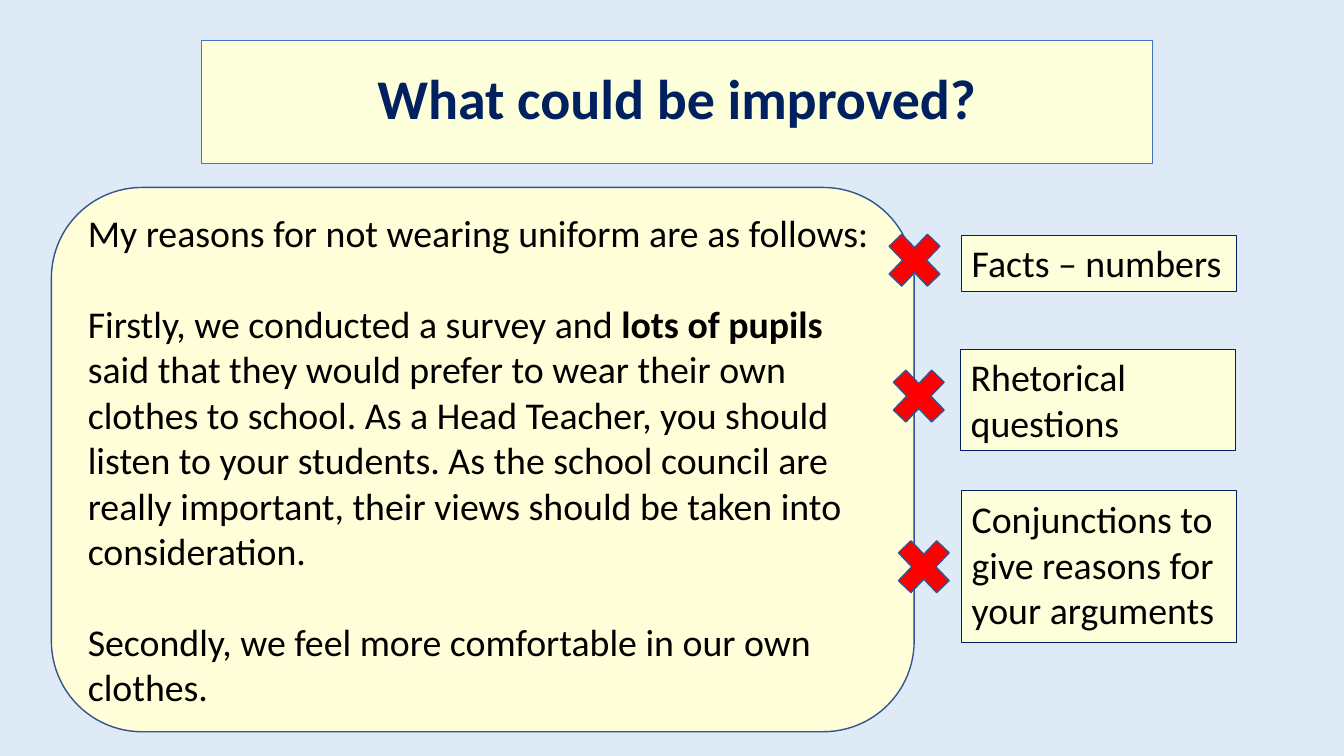
import pptx
import pptx.util
import pptx.dml.color
import pptx.enum.shapes
import pptx.enum.text
from dataclasses import dataclass

Pt = pptx.util.Pt
Shape = pptx.enum.shapes.MSO_SHAPE
Anchor = pptx.enum.text.MSO_ANCHOR
Align = pptx.enum.text.PP_ALIGN


@dataclass
class Theme:
    font: str = "Calibri"
    title_size: float = 40
    body_size: float = 27
    background: str = "DEEBF7"
    panel: str = "FDFEDA"
    letter: str = "FFFED8"
    cross: str = "FF0000"
    navy: str = "002060"
    title_border: str = "4472C4"
    outline: str = "325491"
    ink: str = "000000"


def rgb(code):
    return pptx.dml.color.RGBColor.from_string(code)


class FeedbackSlide:
    """Draws the parts of a writing-feedback slide in one theme."""

    def __init__(self, slide, theme):
        self.slide = slide
        self.theme = theme
        slide.background.fill.solid()
        slide.background.fill.fore_color.rgb = rgb(theme.background)

    def panel(self, kind, box, fill, border, weight):
        panel = self.slide.shapes.add_shape(kind, *map(Pt, box))
        panel.shadow.inherit = False
        panel.fill.solid()
        panel.fill.fore_color.rgb = rgb(fill)
        panel.line.color.rgb = rgb(border)
        panel.line.width = Pt(weight)
        return panel

    def set_text(self, panel, text, size, color, anchor, align=Align.LEFT):
        frame = panel.text_frame
        frame.word_wrap = True
        frame.vertical_anchor = anchor
        frame.text = text
        for paragraph in frame.paragraphs:
            paragraph.alignment = align
            paragraph.font.size = Pt(size)
            for run in paragraph.runs:
                self.style(run, size, color)
        return frame.paragraphs

    def style(self, run, size, color, bold=False):
        run.font.name = self.theme.font
        run.font.size = Pt(size)
        run.font.bold = bold
        run.font.color.rgb = rgb(color)

    def title(self, text, box):
        theme = self.theme
        panel = self.panel(Shape.RECTANGLE, box, theme.panel, theme.title_border, 0.75)
        heading = self.set_text(panel, text, theme.title_size, theme.navy,
                                Anchor.MIDDLE, Align.CENTER)[0]
        heading.line_spacing = 0.9
        heading.runs[0].font.bold = True

    def letter(self, text, box, gap, emphasis):
        theme = self.theme
        panel = self.panel(Shape.ROUNDED_RECTANGLE, box, theme.letter, theme.outline, 1)
        paragraphs = self.set_text(panel, text, theme.body_size, theme.ink, Anchor.MIDDLE)
        for paragraph in paragraphs[1:]:
            paragraph.space_before = Pt(gap)
        for paragraph in paragraphs:
            before, found, after = paragraph.text.partition(emphasis)
            if found:
                paragraph.runs[0].text = before
                for part in (found, after):
                    run = paragraph.add_run()
                    run.text = part
                    self.style(run, theme.body_size, theme.ink, part == emphasis)

    def note(self, text, box):
        theme = self.theme
        panel = self.panel(Shape.RECTANGLE, box, theme.panel, theme.navy, 0.75)
        self.set_text(panel, text, theme.body_size, theme.ink, Anchor.TOP)

    def cross(self, left, top):
        theme = self.theme
        self.panel(Shape.MATH_MULTIPLY, (left, top, 52.6, 54.7),
                   theme.cross, theme.outline, 1)


LETTER = "\n".join([
    "My reasons for not wearing uniform are as follows:",
    "Firstly, we conducted a survey and lots of pupils said that they would "
    "prefer to wear their own clothes to school. As a Head Teacher, you should "
    "listen to your students. As the school council are really important, "
    "their views should be taken into consideration.",
    "Secondly, we feel more comfortable in our own clothes.",
])

IMPROVEMENTS = [
    ("Facts – numbers", (687, 168, 196, 40), (627, 158.5)),
    ("Rhetorical questions", (686.3, 249.3, 196, 72.7), (630, 255.6)),
    ("Conjunctions to give reasons for your arguments",
     (687, 350.6, 196, 108.7), (633.6, 377.5)),
]


def main():
    deck = pptx.Presentation()
    deck.slide_width, deck.slide_height = Pt(960), Pt(540)
    page = FeedbackSlide(deck.slides.add_slide(deck.slide_layouts[6]), Theme())
    page.title("What could be improved?", (144, 28.8, 679, 87.8))
    page.letter(LETTER, (36.7, 133.9, 616.3, 388.8), 32.5, "lots of pupils")
    for advice, box, mark in IMPROVEMENTS:
        page.note(advice, box)
        page.cross(*mark)
    deck.save("out.pptx")


if __name__ == "__main__":
    main()
